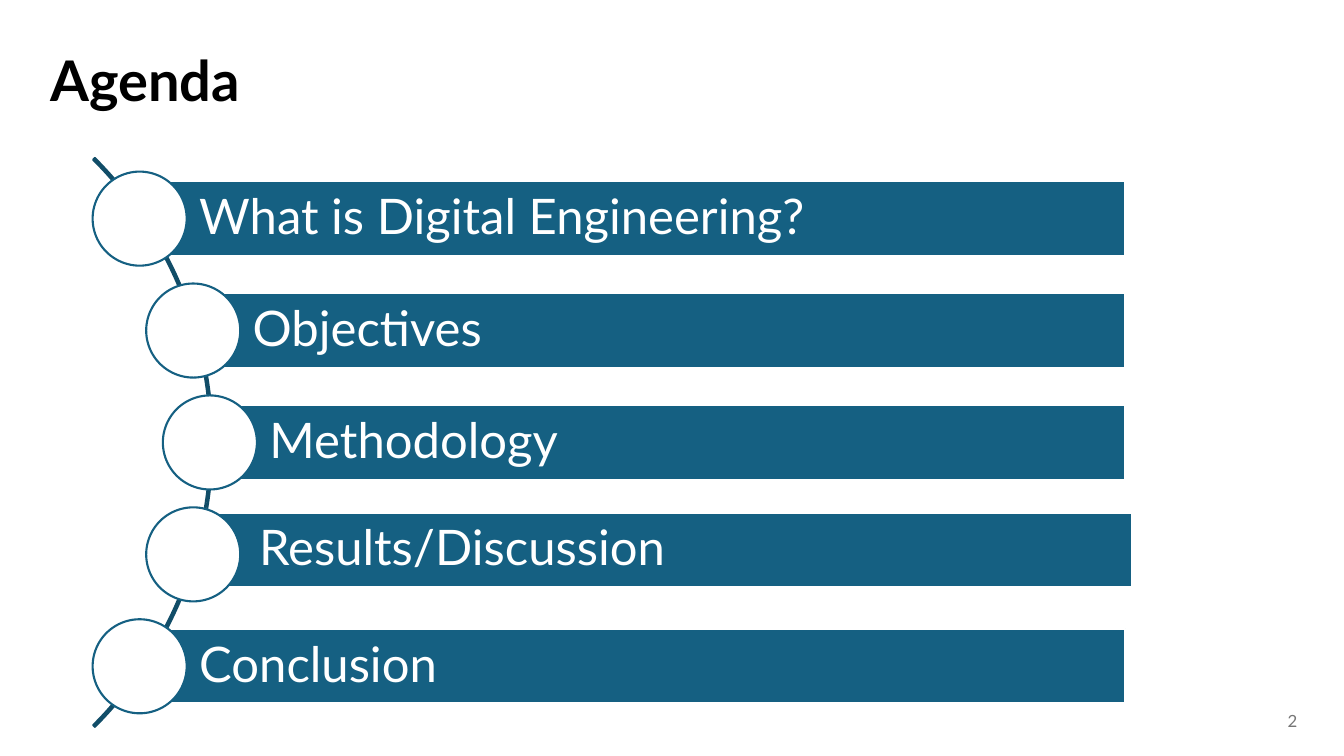
from lxml import etree
from pptx import Presentation
from pptx.dml.color import RGBColor
from pptx.enum.shapes import MSO_SHAPE
from pptx.enum.text import MSO_ANCHOR, PP_ALIGN
from pptx.util import Cm, Pt

ARC, RECT, OVAL = MSO_SHAPE.BLOCK_ARC, MSO_SHAPE.RECTANGLE, MSO_SHAPE.OVAL
TOP, MIDDLE = MSO_ANCHOR.TOP, MSO_ANCHOR.MIDDLE
LEFT = PP_ALIGN.LEFT

BLACK = RGBColor(0x00, 0x00, 0x00)
WHITE = RGBColor(0xFF, 0xFF, 0xFF)
GREY = RGBColor(0x76, 0x76, 0x76)
BLUE = RGBColor(0x15, 0x60, 0x82)
NAVY = RGBColor(0x11, 0x4D, 0x68)

FONT = "Lato"
TITLE = {"size": Pt(40), "bold": True}
LABEL = {"size": Pt(35)}
NUMBER = {"size": Pt(12)}

MID = 11.15      # height of the middle row's centre
STEP = 2.82      # distance between row centres
RIGHT = 28.36    # right end of the bars
BAR = 1.88       # bar height
DOT = 2.37       # circle diameter
ARC_SIZE = 20.27
ARC_LEFT = -14.91

# Label, centre of the circle, shift of the bar (right, down)
ITEMS = [
    ("What is Digital Engineering?", 3.52, (0, 0)),
    ("Objectives", 4.87, (0, 0)),
    ("Methodology", 5.29, (0, 0)),
    ("Results/Discussion", 4.87, (0.16, -0.11)),
    ("Conclusion", 3.52, (0, 0)),
]


def write(shape, text, color, style, anchor=TOP, inset=(0.25, 0.13), space=1.0):
    """Put one left-aligned line in a shape; inset is left, then top and bottom."""
    frame = shape.text_frame
    left, edge = inset
    layout = {
        "word_wrap": True,
        "vertical_anchor": anchor,
        "margin_left": Cm(left),
        "margin_right": Cm(0.25),
        "margin_top": Cm(edge),
        "margin_bottom": Cm(edge),
    }
    for name, value in layout.items():
        setattr(frame, name, value)
    para = frame.paragraphs[0]
    para.alignment = LEFT
    para.line_spacing = space
    run = para.add_run()
    run.text = text
    run.font.color.rgb = color
    for name, value in {"name": FONT, **style}.items():
        setattr(run.font, name, value)


def add_text(slide, box, text, color, style, space=1.0):
    shape = slide.shapes.add_textbox(*map(Cm, box))
    write(shape, text, color, style, space=space)


def add_form(slide, kind, box, fill, line):
    """Add a preset shape; a fill of None leaves it hollow."""
    shape = slide.shapes.add_shape(kind, *map(Cm, box))
    shape.shadow.inherit = False
    if fill is None:
        shape.fill.background()
    else:
        shape.fill.solid()
        shape.fill.fore_color.rgb = fill
    shape.line.color.rgb = line
    shape.line.width = Pt(1.5)
    return shape


def add_arc(slide):
    box = (ARC_LEFT, MID - ARC_SIZE / 2, ARC_SIZE, ARC_SIZE)
    arc = add_form(slide, ARC, box, None, NAVY)
    for index, value in enumerate((189, 27, 0.003)):
        arc.adjustments[index] = value


def add_item(slide, row, text, center, shift):
    right, down = shift
    y = MID + (row - len(ITEMS) // 2) * STEP
    box = (center + right, y - BAR / 2 + down, RIGHT - center, BAR)
    bar = add_form(slide, RECT, box, BLUE, WHITE)
    write(bar, text, WHITE, LABEL, MIDDLE, (1.5, 0.25), 0.9)
    add_form(slide, OVAL, (center - DOT / 2, y - DOT / 2, DOT, DOT), WHITE, BLUE)


def main():
    deck = Presentation()
    deck.slide_width, deck.slide_height = Cm(33.87), Cm(19.05)
    slide = deck.slides.add_slide(deck.slide_layouts[6])
    add_text(slide, (32.2, 17.78, 1.6, 0.76), "2", GREY, NUMBER)
    add_text(slide, (1.02, 1.22, 23.34, 1.42), "Agenda", BLACK, TITLE, 0.9)
    add_arc(slide)
    for row, item in enumerate(ITEMS):
        add_item(slide, row, *item)
    deck.save("out.pptx")


if __name__ == "__main__":
    main()
